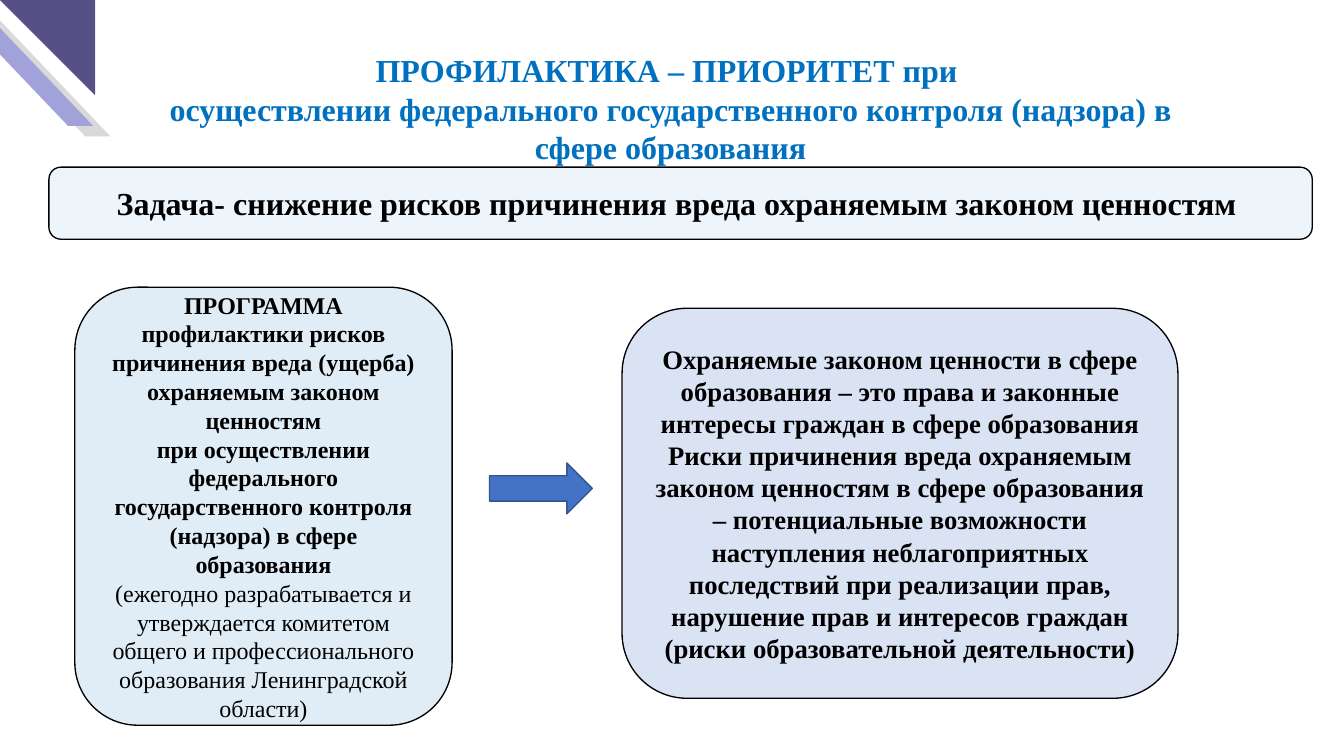
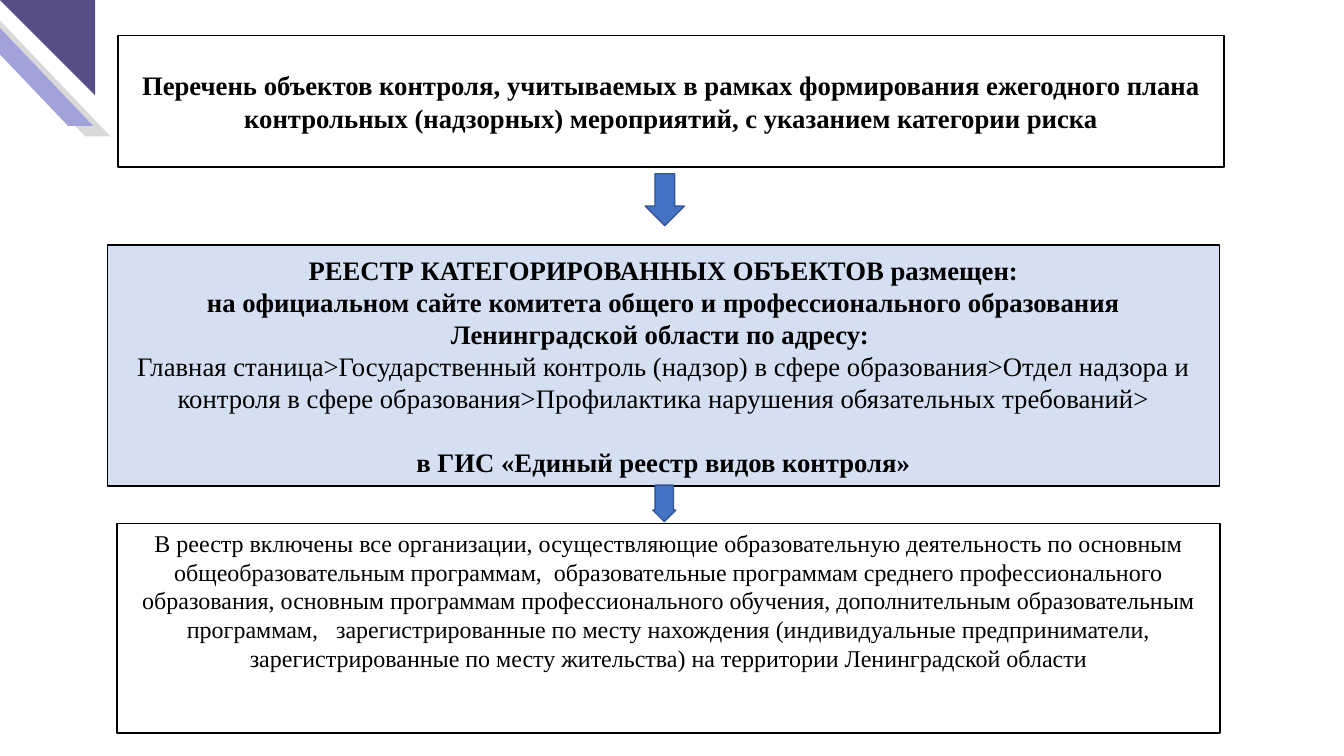
import pptx
import pptx.util
import pptx.dml.color
import pptx.enum.shapes
import pptx.enum.text
import pptx.oxml.ns
from lxml import etree

Inches = pptx.util.Inches
Pt = pptx.util.Pt
Kind = pptx.enum.shapes.MSO_SHAPE
Anchor = pptx.enum.text.MSO_ANCHOR
Align = pptx.enum.text.PP_ALIGN
qn = pptx.oxml.ns.qn

COLORS = {
    "white": "FFFFFF", "black": "000000", "blue": "0070C0",
    "arrow": "4472C4", "edge": "325491", "pale": "DAE3F3", "steel": "8FAADC",
    "gray": "D9D9D9", "lilac": "A2A2DA", "violet": "565087",
}
FONT = "Times New Roman"
TITLE_LAYOUT, BLANK_LAYOUT = 5, 6


def color(name):
    return pptx.dml.color.RGBColor.from_string(COLORS[name])


class Deck:
    def __init__(self, width, height):
        self.prs = pptx.Presentation()
        self.prs.slide_width = Inches(width)
        self.prs.slide_height = Inches(height)
        self.slide = None

    def start(self, layout):
        self.slide = self.prs.slides.add_slide(self.prs.slide_layouts[layout])

    def shape(self, kind, box, fill, line=None, alpha=None, adjust=None):
        shape = self.slide.shapes.add_shape(kind, *map(Inches, box))
        shape.shadow.inherit = False
        shape.fill.solid()
        shape.fill.fore_color.rgb = color(fill)
        if alpha is not None:
            tint = shape.element.spPr.find(qn("a:solidFill"))[0]
            etree.SubElement(tint, qn("a:alpha")).set("val", str(alpha * 1000))
        if line:
            shape.line.color.rgb = color(line)
            shape.line.width = Pt(1)
        else:
            shape.line.fill.background()
        if adjust is not None:
            shape.adjustments[0] = adjust
        return shape

    def label(self, shape, lines, size, ink="black", anchor=Anchor.MIDDLE):
        """Fill a shape with (text, bold, space before) lines."""
        frame = shape.text_frame
        frame.word_wrap = True
        frame.auto_size = pptx.enum.text.MSO_AUTO_SIZE.NONE
        frame.vertical_anchor = anchor
        for num, (text, heavy, gap) in enumerate(lines):
            para = frame.add_paragraph() if num else frame.paragraphs[0]
            para.alignment = Align.CENTER
            para.space_before = Pt(gap)
            run = para.add_run()
            run.text = text
            style = {"name": FONT, "size": Pt(size), "bold": heavy}
            for key, value in style.items():
                setattr(run.font, key, value)
            run.font.color.rgb = color(ink)

    def title(self, box, lines):
        title = self.slide.shapes.title
        for key, value in zip(("left", "top", "width", "height"), box):
            setattr(title, key, Inches(value))
        self.label(title, lines, 24, "blue", Anchor.TOP)

    def panel(self, kind, box, fill, lines, size, alpha=None, anchor=Anchor.MIDDLE):
        panel = self.shape(kind, box, fill, "black", alpha)
        self.label(panel, lines, size, anchor=anchor)

    def arrow(self, kind, box, adjust=None):
        self.shape(kind, box, "arrow", "edge", adjust=adjust)

    def corner(self):
        """Move the corner ornament to the master, so every slide shows it."""
        parts = [
            (Kind.PARALLELOGRAM, (-0.36, 0.11, 1.51, 1.31), "gray", 0.953, "flipH"),
            (Kind.PARALLELOGRAM, (-0.54, 0, 1.51, 1.31), "lilac", 0.953, "flipH"),
            (Kind.RIGHT_TRIANGLE, (0, 0, 0.99, 0.99), "violet", None, "flipH flipV"),
        ]
        tree = self.prs.slide_master.shapes.element
        for num, (kind, box, fill, adjust, flips) in enumerate(parts):
            node = self.shape(kind, box, fill, adjust=adjust).element
            for flip in flips.split():
                node.spPr.find(qn("a:xfrm")).set(flip, "1")
            node.find(".//" + qn("p:cNvPr")).set("id", str(100 + num))
            tree.append(node)


def bold(*texts):
    return [(text, True, 0) for text in texts]


def plain(*texts):
    return [(text, False, 0) for text in texts]


def risks(deck):
    deck.start(TITLE_LAYOUT)
    deck.corner()
    deck.title((1.49, 0.48, 10.99, 2.19), bold(
        "ПРОФИЛАКТИКА – ПРИОРИТЕТ при ",
        "осуществлении федерального государственного контроля (надзора) в сфере образования"))
    deck.panel(Kind.ROUNDED_RECTANGLE, (0.51, 1.74, 13.16, 0.75), "blue", bold(
        "Задача- снижение рисков причинения вреда охраняемым законом ценностям "), 24, 7)
    deck.panel(Kind.ROUNDED_RECTANGLE, (0.78, 2.99, 3.93, 4.56), "blue", bold(
        "ПРОГРАММА",
        "профилактики рисков причинения вреда (ущерба)",
        "охраняемым законом ценностям",
        "при осуществлении федерального государственного контроля (надзора) в сфере образования",
    ) + plain(
        "(ежегодно разрабатывается и утверждается комитетом общего и профессионального "
        "образования Ленинградской области)"), 18, 12)
    deck.panel(Kind.ROUNDED_RECTANGLE, (6.48, 3.21, 5.79, 4.06), "pale", bold(
        "Охраняемые законом ценности в сфере образования – это права и законные интересы "
        "граждан в сфере образования",
        "Риски причинения вреда охраняемым законом ценностям в сфере образования – "
        "потенциальные возможности наступления неблагоприятных последствий при реализации "
        "прав, нарушение прав и интересов граждан",
        "(риски образовательной деятельности)"), 20)
    deck.arrow(Kind.RIGHT_ARROW, (5.1, 4.82, 1.07, 0.53))


def registry(deck):
    deck.start(BLANK_LAYOUT)
    deck.arrow(Kind.DOWN_ARROW, (6.72, 1.81, 0.41, 0.54))
    deck.panel(Kind.RECTANGLE, (1.23, 0.37, 11.52, 1.37), "white", bold(
        "Перечень объектов контроля, учитываемых в рамках формирования ежегодного плана "
        "контрольных (надзорных) мероприятий, с указанием категории риска"), 20)
    deck.panel(Kind.RECTANGLE, (1.12, 2.55, 11.58, 2.51), "steel", bold(
        "РЕЕСТР КАТЕГОРИРОВАННЫХ ОБЪЕКТОВ размещен:",
        "на официальном сайте комитета общего и профессионального образования "
        "Ленинградской области по адресу: ",
    ) + plain(
        "Главная станица>Государственный контроль (надзор) в сфере образования>Отдел "
        "надзора и контроля в сфере образования>Профилактика нарушения обязательных "
        "требований>",
    ) + [("в ГИС «Единый реестр видов контроля»", True, 24)], 20, 37)
    deck.arrow(Kind.DOWN_ARROW, (6.8, 5.05, 0.24, 0.38), 0.794)
    deck.panel(Kind.RECTANGLE, (1.22, 5.45, 11.49, 2.18), "white", plain(
        "В реестр включены все организации, осуществляющие образовательную деятельность "
        "по основным общеобразовательным программам,  образовательные программам среднего "
        "профессионального образования, основным программам профессионального обучения, "
        "дополнительным образовательным программам,   зарегистрированные по месту "
        "нахождения (индивидуальные предприниматели, зарегистрированные по месту "
        "жительства) на территории Ленинградской области"), 18, anchor=Anchor.TOP)


def main():
    deck = Deck(14, 7.87)
    risks(deck)
    registry(deck)
    deck.prs.save("out.pptx")


if __name__ == "__main__":
    main()
